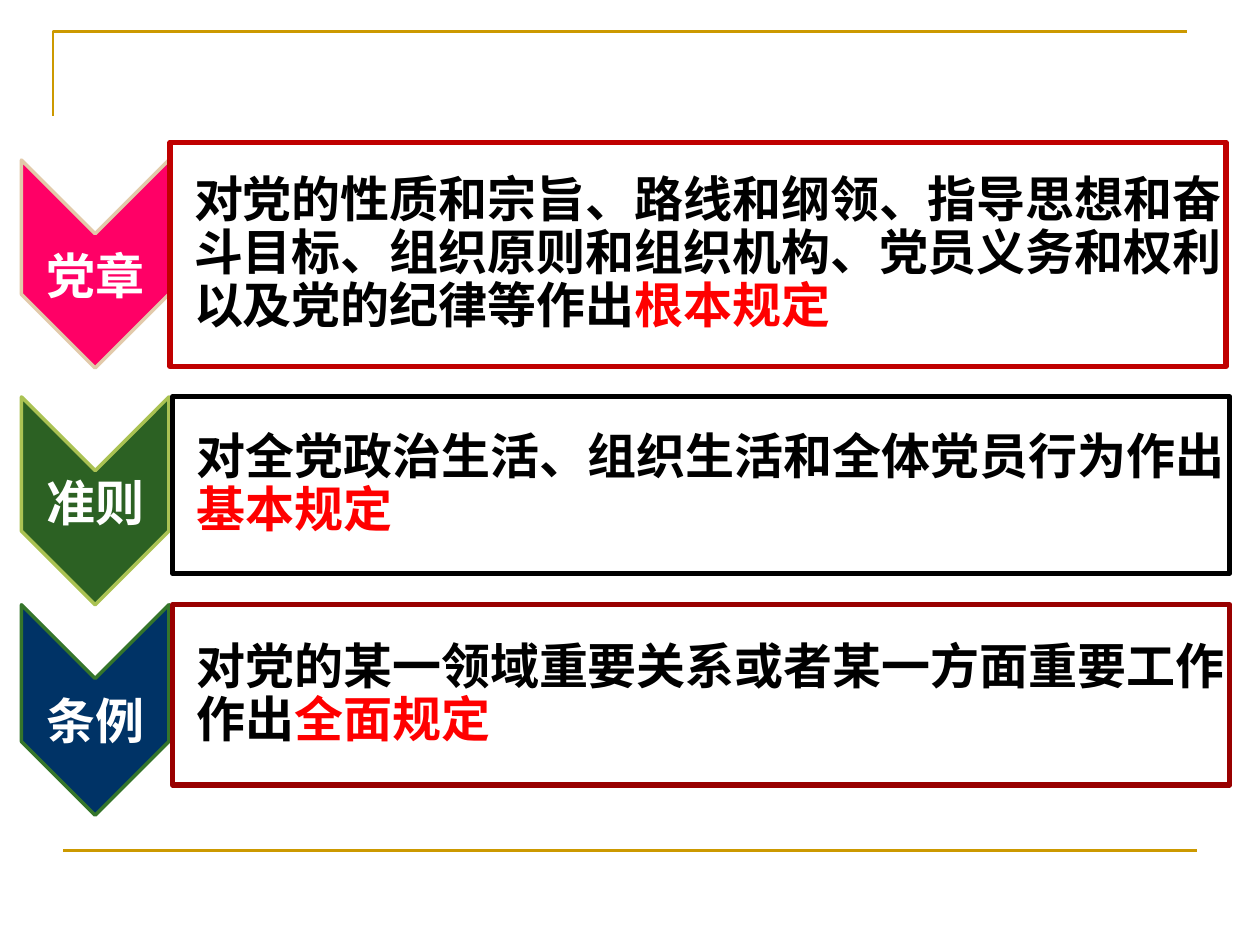
from lxml import etree
from pptx import Presentation
from pptx.dml.color import RGBColor
from pptx.enum.shapes import MSO_CONNECTOR, MSO_SHAPE
from pptx.enum.text import MSO_ANCHOR, PP_ALIGN
from pptx.oxml.ns import qn
from pptx.util import Inches, Pt

CHEVRON, RECTANGLE = MSO_SHAPE.CHEVRON, MSO_SHAPE.RECTANGLE
STRAIGHT = MSO_CONNECTOR.STRAIGHT
MIDDLE = MSO_ANCHOR.MIDDLE
LEFT, CENTER = PP_ALIGN.LEFT, PP_ALIGN.CENTER

GOLD = RGBColor(0xCC, 0x99, 0x00)
WHITE = RGBColor(0xFF, 0xFF, 0xFF)
BLACK = RGBColor(0x00, 0x00, 0x00)
RED = RGBColor(0xFF, 0x00, 0x00)
PINK = RGBColor(0xFF, 0x00, 0x66)
SAND = RGBColor(0xE2, 0xCA, 0xAA)
CRIMSON = RGBColor(0xC0, 0x00, 0x00)
GREEN = RGBColor(0x2C, 0x61, 0x23)
LIME = RGBColor(0xAA, 0xC2, 0x53)
NAVY = RGBColor(0x00, 0x33, 0x66)
LEAF = RGBColor(0x35, 0x75, 0x2B)
MAROON = RGBColor(0x99, 0x00, 0x00)

FONT = "Noto Sans CJK SC"
CHEVRON_LEFT, CHEVRON_WIDTH = 0.17, 1.17
LABEL_LEFT, LABEL_WIDTH, LABEL_HEIGHT = 0.33, 0.85, 0.5

RULES = [
    {"label": "党章", "fill": PINK, "edge": SAND, "chevron": (1.27, 1.65), "label_top": 1.96,
     "panel": (1.35, 1.13, 8.38, 1.78), "panel_fill": WHITE, "panel_edge": CRIMSON,
     "text": "对党的性质和宗旨、路线和纲领、指导思想和奋斗目标、组织原则和组织机构、"
             "党员义务和权利以及党的纪律等作出",
     "emphasis": "根本规定"},
    {"label": "准则", "fill": GREEN, "edge": LIME, "chevron": (3.15, 1.65), "label_top": 3.76,
     "panel": (1.37, 3.15, 8.39, 1.4), "panel_fill": None, "panel_edge": BLACK,
     "text": "对全党政治生活、组织生活和全体党员行为作出", "emphasis": "基本规定"},
    {"label": "条例", "fill": NAVY, "edge": LEAF, "chevron": (4.8, 1.67), "label_top": 5.49,
     "panel": (1.37, 4.8, 8.39, 1.43), "panel_fill": WHITE, "panel_edge": MAROON,
     "text": "对党的某一领域重要关系或者某一方面重要工作作出", "emphasis": "全面规定"},
]


def style_shape(shape, fill, edge, width):
    """Set the fill and outline of a shape and remove its shadow."""
    shape.shadow.inherit = False
    if fill is None:
        shape.fill.background()
    else:
        shape.fill.solid()
        shape.fill.fore_color.rgb = fill
    shape.line.color.rgb = edge
    shape.line.width = Pt(width)


def write_text(shape, runs, alignment, left_margin):
    """Write one paragraph of (text, colour) runs, centred vertically."""
    frame = shape.text_frame
    frame.word_wrap = True
    frame.vertical_anchor = MIDDLE
    frame.margin_left = Inches(left_margin)
    frame.margin_top = frame.margin_right = frame.margin_bottom = Inches(0.02)
    paragraph = frame.paragraphs[0]
    paragraph.alignment = alignment
    paragraph.line_spacing = 0.9
    for text, color in runs:
        run = paragraph.add_run()
        run.text = text
        run.font.size = Pt(28)
        run.font.bold = True
        run.font.color.rgb = color
        run.font.name = FONT
        east_asian = etree.SubElement(run.font._element, qn("a:ea"))
        east_asian.set("typeface", FONT)


def add_frame(slide, left, top, width, bottom):
    """Draw the gold corner and the gold footer line."""
    builder = slide.shapes.build_freeform(Inches(left), Inches(top + 0.67))
    corner_points = [(Inches(left), Inches(top)), (Inches(left + width), Inches(top))]
    builder.add_line_segments(corner_points, close=False)
    style_shape(builder.convert_to_shape(), None, GOLD, 1.5)

    footer = slide.shapes.add_connector(
        STRAIGHT, Inches(0.5), Inches(bottom), Inches(0.5 + width), Inches(bottom))
    footer.line.color.rgb = GOLD
    footer.line.width = Pt(1.5)
    etree.SubElement(footer._element.spPr, qn("a:effectLst"))


def add_chevron(slide, left, top, width, height, fill, edge):
    """Add a chevron that points down and fills the given box."""
    shift = (height - width) / 2
    chevron = slide.shapes.add_shape(
        CHEVRON, Inches(left - shift), Inches(top + shift), Inches(height), Inches(width))
    chevron.rotation = 90
    chevron.adjustments[0] = 0.5
    style_shape(chevron, fill, edge, 2)


def add_rule(slide, rule):
    """Add one row: chevron, its label and the text panel."""
    top, height = rule["chevron"]
    add_chevron(slide, CHEVRON_LEFT, top, CHEVRON_WIDTH, height, rule["fill"], rule["edge"])

    label = slide.shapes.add_textbox(
        Inches(LABEL_LEFT), Inches(rule["label_top"]), Inches(LABEL_WIDTH), Inches(LABEL_HEIGHT))
    write_text(label, [(rule["label"], WHITE)], CENTER, 0.02)

    panel = slide.shapes.add_shape(RECTANGLE, *map(Inches, rule["panel"]))
    style_shape(panel, rule["panel_fill"], rule["panel_edge"], 3)
    write_text(panel, [(rule["text"], BLACK), (rule["emphasis"], RED)], LEFT, 0.19)


def main():
    """Build the slide and save it."""
    presentation = Presentation()
    presentation.slide_width = Inches(10)
    presentation.slide_height = Inches(7.5)
    slide = presentation.slides.add_slide(presentation.slide_layouts[6])
    add_frame(slide, 0.42, 0.25, 9, 6.75)
    for rule in RULES:
        add_rule(slide, rule)
    presentation.save("out.pptx")


if __name__ == "__main__":
    main()
